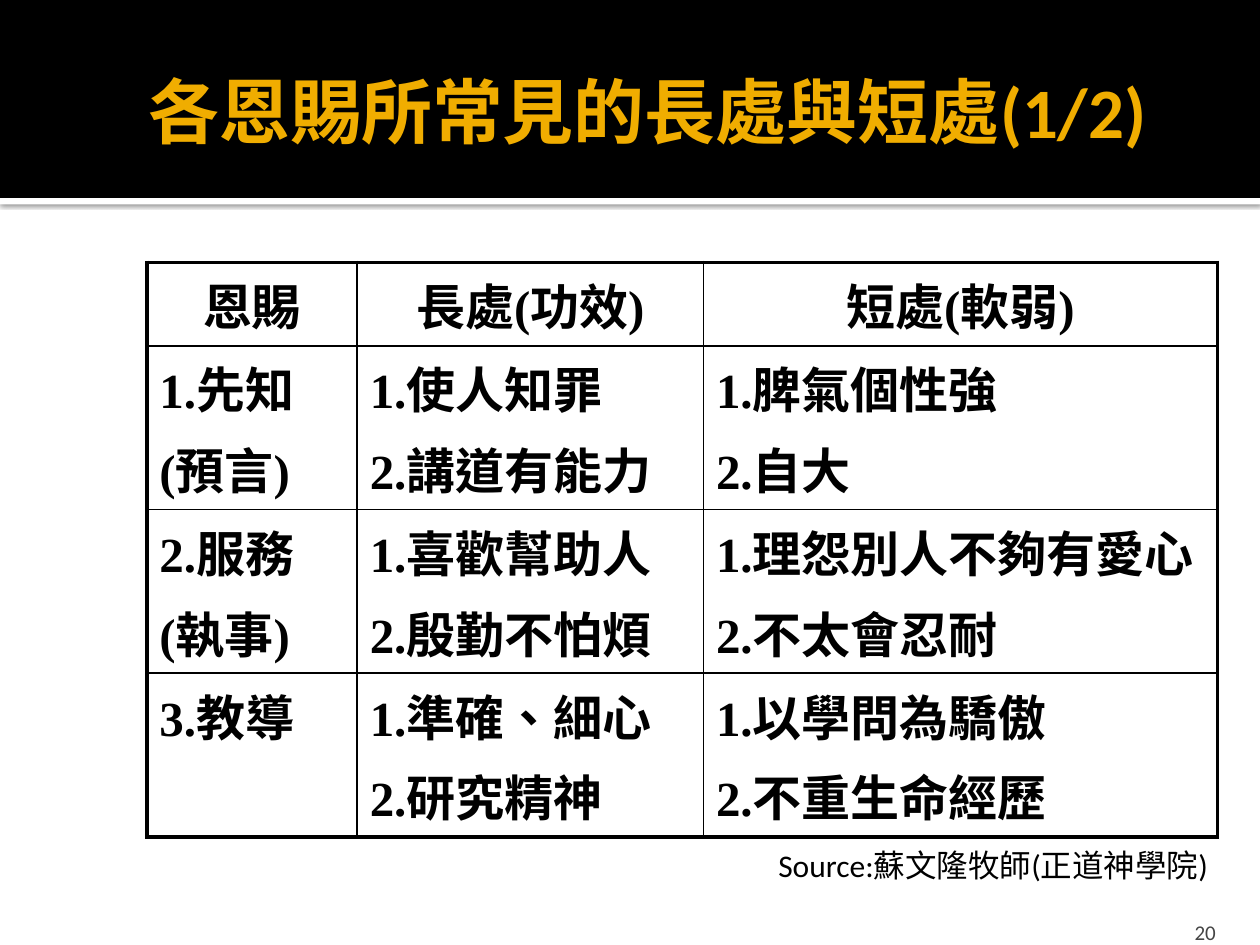
from dataclasses import dataclass

from lxml import etree
from pptx import Presentation
from pptx.dml.color import RGBColor
from pptx.enum.lang import MSO_LANGUAGE_ID
from pptx.enum.shapes import MSO_SHAPE
from pptx.enum.text import MSO_ANCHOR, PP_ALIGN
from pptx.oxml import parse_xml
from pptx.oxml.ns import qn
from pptx.util import Cm, Pt

RECTANGLE = MSO_SHAPE.RECTANGLE
TOP, MIDDLE, BOTTOM = MSO_ANCHOR.TOP, MSO_ANCHOR.MIDDLE, MSO_ANCHOR.BOTTOM
LEFT, CENTER, RIGHT = PP_ALIGN.LEFT, PP_ALIGN.CENTER, PP_ALIGN.RIGHT
CHINESE = MSO_LANGUAGE_ID.TRADITIONAL_CHINESE
DRAWING_NS = "http://schemas.openxmlformats.org/drawingml/2006/main"


@dataclass(frozen=True)
class Theme:
    black: RGBColor = RGBColor(0, 0, 0)
    white: RGBColor = RGBColor(255, 255, 255)
    gold: RGBColor = RGBColor(0xF0, 0xAD, 0x00)
    gray: RGBColor = RGBColor(0x45, 0x45, 0x45)
    sans: str = "Calibri"
    serif: str = "Times New Roman"
    title_size: Pt = Pt(40.5)
    table_size: Pt = Pt(28)
    source_size: Pt = Pt(18)
    number_size: Pt = Pt(12)
    thick: Pt = Pt(2.25)
    thin: Pt = Pt(1)


theme = Theme()


def style_paragraph(para, text, name, size, color, bold, align):
    para.text = text
    para.alignment = align
    para.font.name = name
    para.font.size = size
    para.font.color.rgb = color
    para.font.bold = bold


def set_borders(cell, widths):
    """Draw black cell borders; widths are in the order left, right, top, bottom."""
    properties = cell._tc.get_or_add_tcPr()
    for index, (side, width) in enumerate(zip("LRTB", widths)):
        line = etree.Element(qn(f"a:ln{side}"), w=str(int(width)))
        fill = etree.SubElement(line, qn("a:solidFill"))
        etree.SubElement(fill, qn("a:srgbClr"), val=str(theme.black))
        properties.insert(index, line)


deck = Presentation()
deck.slide_width, deck.slide_height = Cm(25.4), Cm(19.05)
page = deck.slides.add_slide(deck.slide_layouts[6])

# Title band with a white, shadowed edge below it
edge = page.shapes.add_shape(RECTANGLE, Cm(0), Cm(3.99), Cm(25.4), Cm(0.13))
band = page.shapes.add_shape(RECTANGLE, Cm(0), Cm(0), Cm(25.4), Cm(3.99))
for bar, color in ((edge, theme.white), (band, theme.black)):
    bar.shadow.inherit = False
    bar.fill.solid()
    bar.fill.fore_color.rgb = color
    bar.line.fill.background()
edge_effects = edge._element.spPr.find(qn("a:effectLst"))
edge_effects.append(parse_xml(
    f'<a:outerShdw xmlns:a="{DRAWING_NS}" blurRad="{Pt(2.5)}" dist="{Pt(0.8)}" '
    'dir="5400000" algn="t" rotWithShape="0">'
    '<a:srgbClr val="000000"><a:alpha val="60000"/></a:srgbClr></a:outerShdw>'))

# Title, source and page number
labels = [
    ("各恩賜所常見的長處與短處(1/2)", (2.74, 0.64, 21.59, 3.18),
     theme.title_size, theme.gold, True, LEFT, MIDDLE),
    ("Source:蘇文隆牧師(正道神學院)", (15.44, 16.94, 9.32, 1.02),
     theme.source_size, theme.black, False, LEFT, TOP),
    ("20", (19.48, 17.78, 5.28, 1.27),
     theme.number_size, theme.gray, False, RIGHT, BOTTOM),
]
for text, place, size, color, bold, align, anchor in labels:
    box = page.shapes.add_textbox(*map(Cm, place))
    frame = box.text_frame
    frame.word_wrap = True
    frame.vertical_anchor = anchor
    if anchor == MIDDLE:
        frame.margin_right = Cm(0.13)
    if anchor == BOTTOM:
        frame.margin_bottom = 0
    style_paragraph(frame.paragraphs[0], text, theme.sans, size, color, bold, align)

# Table of gifts
rows = [
    ("恩賜", "長處(功效)", "短處(軟弱)"),
    ("1.先知\n(預言)", "1.使人知罪\n2.講道有能力", "1.脾氣個性強\n2.自大"),
    ("2.服務\n(執事)", "1.喜歡幫助人\n2.殷勤不怕煩", "1.理怨別人不夠有愛心\n2.不太會忍耐"),
    ("3.教導", "1.準確、細心\n2.研究精神", "1.以學問為驕傲\n2.不重生命經歷"),
]
column_widths = [4.24, 6.98, 10.36]
row_heights = [1.68] + [3.3] * 3
table = page.shapes.add_table(
    len(rows), len(column_widths), Cm(2.96), Cm(5.29),
    Cm(sum(column_widths)), Cm(sum(row_heights))).table
table.first_row = table.horz_banding = False
for column, width in zip(table.columns, column_widths):
    column.width = Cm(width)
for row, height in zip(table.rows, row_heights):
    row.height = Cm(height)

last_row, last_column = len(rows) - 1, len(column_widths) - 1
for r, texts in enumerate(rows):
    for c, text in enumerate(texts):
        cell = table.cell(r, c)
        cell.fill.background()
        if r:
            cell.margin_right = 0  # keeps the longest line from wrapping
        outer_sides = (c == 0, c == last_column, r == 0, r == last_row)
        set_borders(cell, [theme.thick if outer else theme.thin for outer in outer_sides])
        frame = cell.text_frame
        for index, line in enumerate(text.split("\n")):
            para = frame.add_paragraph() if index else frame.paragraphs[0]
            style_paragraph(para, line, theme.serif, theme.table_size, theme.black,
                            True, LEFT if r else CENTER)
            para.space_before = Pt(5.6)
            para.runs[0].font.language_id = CHINESE

deck.save("out.pptx")
